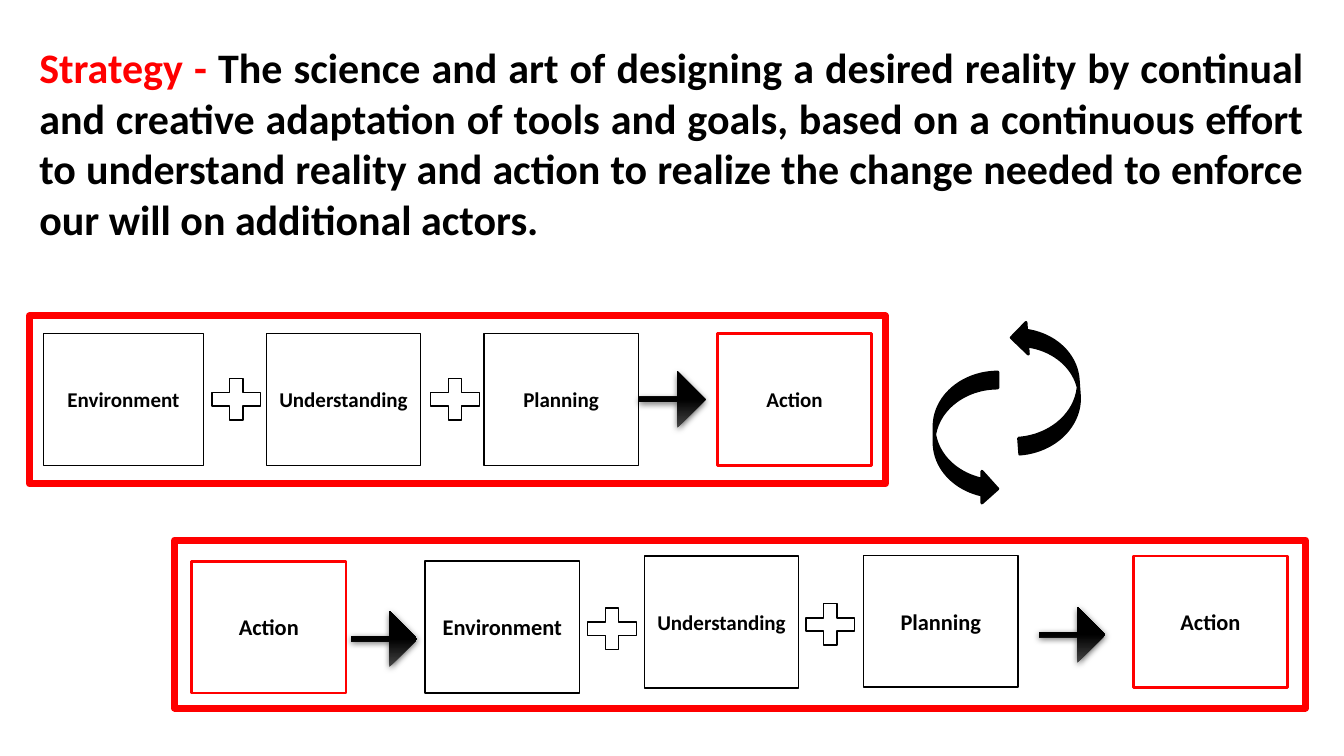
from dataclasses import dataclass

from lxml import etree
from pptx import Presentation
from pptx.dml.color import RGBColor
from pptx.enum.shapes import MSO_SHAPE
from pptx.enum.text import MSO_ANCHOR, PP_ALIGN
from pptx.oxml.ns import qn
from pptx.util import Inches, Pt

RECTANGLE = MSO_SHAPE.RECTANGLE
PLUS = MSO_SHAPE.MATH_PLUS
ARROW = MSO_SHAPE.LEFT_ARROW
CURVED_ARROW = MSO_SHAPE.CURVED_RIGHT_ARROW
CENTER, JUSTIFY = PP_ALIGN.CENTER, PP_ALIGN.JUSTIFY
MIDDLE = MSO_ANCHOR.MIDDLE


@dataclass
class Theme:
    """Colours, font and sizes used on the slide."""
    red = RGBColor(0xFF, 0x00, 0x00)
    black = RGBColor(0x00, 0x00, 0x00)
    gray = RGBColor(0x45, 0x45, 0x45)
    white = RGBColor(0xFF, 0xFF, 0xFF)
    font = "Calibri"
    definition = Pt(30)
    small = Pt(15)
    large = Pt(16)
    thin, medium, thick = Pt(1), Pt(2), Pt(5)


theme = Theme()
presentation = Presentation()
presentation.slide_width = Inches(13.33)
presentation.slide_height = Inches(7.5)
slide = presentation.slides.add_slide(presentation.slide_layouts[6])

# The slide is a grid of 160 columns by 90 rows.
COLUMN = presentation.slide_width / 160
ROW = presentation.slide_height / 90


def place(left, top, width, height):
    """Turn grid columns and rows into slide lengths."""
    return int(left * COLUMN), int(top * ROW), int(width * COLUMN), int(height * ROW)


def add_figure(kind, area, fill, line, line_width):
    """Add a preset shape without shadow; None leaves out fill or line."""
    shape = slide.shapes.add_shape(kind, *place(*area))
    shape.shadow.inherit = False
    for format_fill, color in ((shape.fill, fill), (shape.line.fill, line)):
        if color is None:
            format_fill.background()
        else:
            format_fill.solid()
            format_fill.fore_color.rgb = color
    if line is not None:
        shape.line.width = line_width
    return shape


# Frames around the two cycles
for frame in ((3.5, 37.6, 101.9, 20), (20.8, 64.3, 134.6, 20)):
    add_figure(RECTANGLE, frame, None, theme.red, theme.thick)

# Steps: label, left, top, width, text size
BOX_WIDTH, BOX_HEIGHT = 18.4, 15.7
FIRST_TOP = 39.7
steps = (
    ("Environment", 5.2, FIRST_TOP, 19, theme.small),
    ("Understanding", 31.7, FIRST_TOP, BOX_WIDTH, theme.small),
    ("Planning", 57.6, FIRST_TOP, BOX_WIDTH, theme.small),
    ("Action", 85.4, FIRST_TOP, BOX_WIDTH, theme.small),
    ("Action", 22.8, 66.8, BOX_WIDTH, theme.large),
    ("Environment", 50.6, 66.8, BOX_WIDTH, theme.large),
    ("Understanding", 76.7, 66.2, BOX_WIDTH, theme.small),
    ("Planning", 102.8, 66.1, BOX_WIDTH, theme.large),
    ("Action", 134.9, 66.2, BOX_WIDTH, theme.large),
)
for label, left, top, width, size in steps:
    is_action = label == "Action"
    box = add_figure(RECTANGLE, (left, top, width, BOX_HEIGHT), theme.white,
                     theme.red if is_action else theme.black,
                     theme.medium if is_action else theme.thin)
    box.text_frame.word_wrap = True
    box.text_frame.vertical_anchor = MIDDLE
    paragraph = box.text_frame.paragraphs[0]
    paragraph.text = label
    paragraph.alignment = CENTER
    paragraph.font.name = theme.font
    paragraph.font.size = size
    paragraph.font.bold = True
    paragraph.font.color.rgb = theme.black

# Plus signs and arrows between the steps
SIGN_WIDTH, SIGN_HEIGHT = 7.9, 6.7
for left, top in ((24.2, 44.2), (50.2, 44.2), (68.9, 71.5), (94.9, 71)):
    add_figure(PLUS, (left, top, SIGN_WIDTH, SIGN_HEIGHT),
               theme.white, theme.black, theme.thin)

for left, top in ((76.1, 44.2), (41.8, 72.7), (123.7, 72.2)):
    arrow = add_figure(ARROW, (left, top, SIGN_WIDTH, SIGN_HEIGHT),
                       theme.black, None, None)
    arrow.rotation = 180
    arrow.adjustments[0] = 0.09
    arrow.adjustments[1] = 0.5
    arrow.fill.gradient()
    arrow.fill.gradient_angle = 270
    stops = arrow.fill.gradient_stops
    for stop, color, position in zip(stops, (theme.gray, theme.black), (0, 0.5)):
        stop.color.rgb = color
        stop.position = position
    effects = arrow.element.spPr.find(qn("a:effectLst"))
    shadow = etree.SubElement(effects, qn("a:outerShdw"), blurRad=str(Pt(5)),
                              dist=str(Pt(1.5)), dir="5400000", rotWithShape="0")
    shadow_color = etree.SubElement(shadow, qn("a:srgbClr"), val=str(theme.black))
    etree.SubElement(shadow_color, qn("a:alpha"), val="63000")

# Curved arrows linking the two cycles
for left, top, rotation in ((111.2, 44.3, 0), (120.8, 38, 175.8)):
    curve = add_figure(CURVED_ARROW, (left, top, 7.6, 15.8),
                       theme.black, theme.black, theme.medium)
    curve.rotation = rotation

# Definition of strategy
definition = slide.shapes.add_textbox(*place(3.5, 3.8, 153, 32.4))
text_frame = definition.text_frame
text_frame.word_wrap = True
text_frame.margin_top = text_frame.margin_bottom = Inches(0.1)
paragraph = text_frame.paragraphs[0]
paragraph.alignment = JUSTIFY
paragraph.font.name = theme.font
paragraph.font.size = theme.definition
paragraph.font.bold = True
for text, color in (
    ("Strategy - ", theme.red),
    ("The science and art of designing a desired reality by continual and "
     "creative adaptation of tools and goals, based on a continuous effort to "
     "understand reality and action to realize the change needed to enforce "
     "our will on additional actors.", theme.black),
):
    run = paragraph.add_run()
    run.text = text
    run.font.color.rgb = color

presentation.save("out.pptx")
